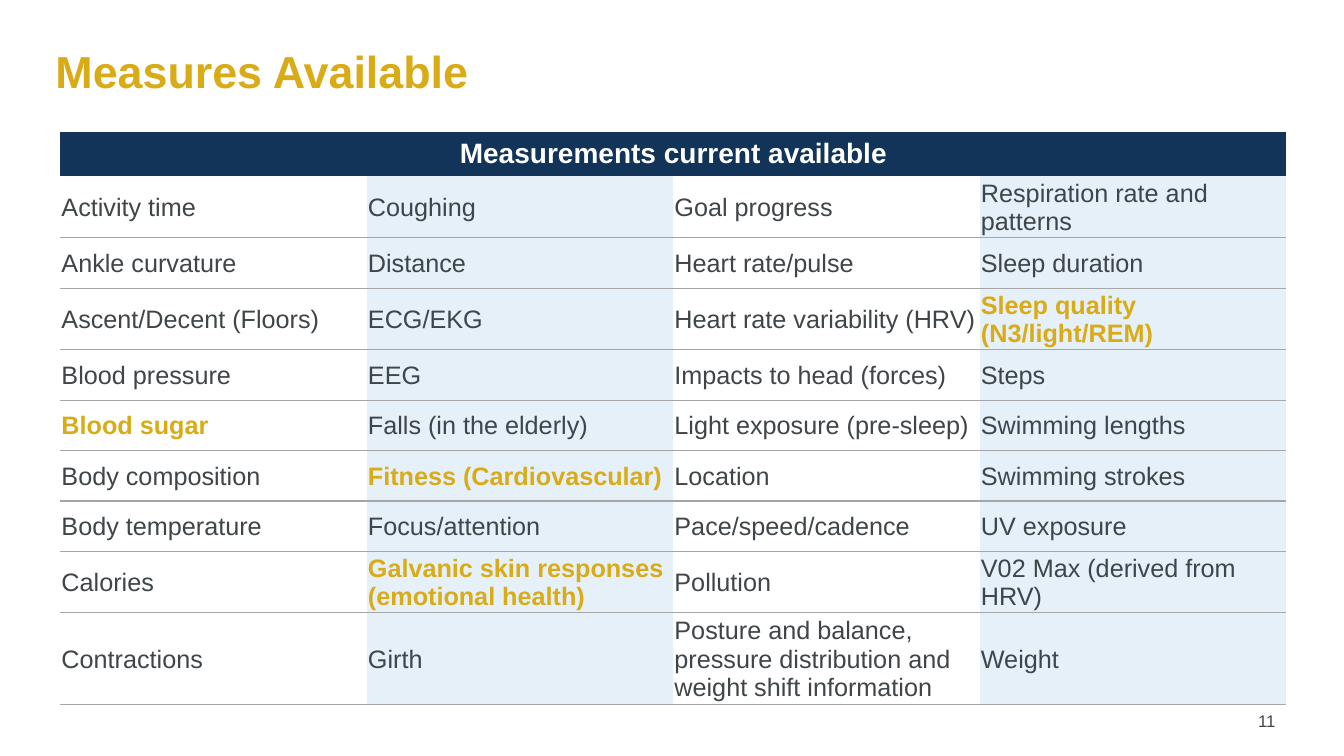
from dataclasses import dataclass

from pptx import Presentation
from pptx.dml.color import RGBColor
from pptx.enum.shapes import MSO_CONNECTOR
from pptx.enum.text import MSO_ANCHOR, MSO_AUTO_SIZE, PP_ALIGN
from pptx.oxml.ns import qn
from pptx.util import Pt
from lxml.etree import SubElement

PX = 9144  # EMU per px, 100 px to the inch


@dataclass(frozen=True)
class Theme:
    font: str = "Arial"
    gold: str = "D9AB16"
    navy: str = "113458"
    ink: str = "3F4548"
    white: str = "FFFFFF"
    pale_blue: str = "E5F0F9"
    rule: str = "A6A6A6"
    title_size: int = 32
    header_size: int = 20
    body_size: int = 18
    number_size: int = 12
    line_width: int = 1


THEME = Theme()

HEADING = "Measurements current available"
MEASURES = [
    ["Activity time", "Coughing", "Goal progress", "Respiration rate and patterns"],
    ["Ankle curvature", "Distance", "Heart rate/pulse", "Sleep duration"],
    ["Ascent/Decent (Floors)", "ECG/EKG", "Heart rate variability (HRV)",
     "Sleep quality (N3/light/REM)"],
    ["Blood pressure", "EEG", "Impacts to head (forces)", "Steps"],
    ["Blood sugar", "Falls (in the elderly)", "Light exposure (pre-sleep)",
     "Swimming lengths"],
    ["Body composition", "Fitness (Cardiovascular)", "Location", "Swimming strokes"],
    ["Body temperature", "Focus/attention", "Pace/speed/cadence", "UV exposure"],
    ["Calories", "Galvanic skin responses (emotional health)", "Pollution",
     "V02 Max (derived from HRV)"],
    ["Contractions", "Girth",
     "Posture and balance, pressure distribution and weight shift information",
     "Weight"],
]
HIGHLIGHTED = {
    "Sleep quality (N3/light/REM)",
    "Blood sugar",
    "Fitness (Cardiovascular)",
    "Galvanic skin responses (emotional health)",
}
ROW_HEIGHTS = [44, 58, 50, 58, 50, 50, 50, 50, 58, 86]


def emu(box):
    return [length * PX for length in box]


def set_all(target, values):
    for attribute, value in values.items():
        setattr(target, attribute, value)


def write(frame, text, size, color, bold=False, align=PP_ALIGN.LEFT):
    """Fill a text frame with one formatted paragraph."""
    frame.word_wrap = True
    paragraph = frame.paragraphs[0]
    paragraph.alignment = align
    run = paragraph.add_run()
    run.text = text
    set_all(run.font, {"name": THEME.font, "size": Pt(size), "bold": bold})
    run.font.color.rgb = RGBColor.from_string(color)


def add_title(slide, box, text):
    title = slide.shapes.title
    set_all(title, dict(zip(("left", "top", "width", "height"), emu(box))))
    set_all(title.text_frame, {"vertical_anchor": MSO_ANCHOR.MIDDLE,
                               "auto_size": MSO_AUTO_SIZE.NONE})
    write(title.text_frame, text, THEME.title_size, THEME.gold, bold=True)


def set_cell_look(cell, fill, ruled_sides):
    """Rule the given sides, clear the others, then fill the cell."""
    properties = cell._tc.get_or_add_tcPr()
    for side in ("lnL", "lnR", "lnT", "lnB"):
        border = SubElement(properties, qn(f"a:{side}"), w=str(Pt(THEME.line_width)))
        if side in ruled_sides:
            solid = SubElement(border, qn("a:solidFill"))
            SubElement(solid, qn("a:srgbClr"), val=THEME.rule)
        else:
            SubElement(border, qn("a:noFill"))
    cell.fill.solid()
    cell.fill.fore_color.rgb = RGBColor.from_string(fill)
    cell.vertical_anchor = MSO_ANCHOR.MIDDLE


def add_measures_table(slide, box):
    columns = len(MEASURES[0])
    table = slide.shapes.add_table(len(ROW_HEIGHTS), columns, *emu(box)).table
    set_all(table, {"first_row": False, "horz_banding": False})
    for row, height in zip(table.rows, ROW_HEIGHTS):
        row.height = height * PX

    header = table.cell(0, 0)
    header.merge(table.cell(0, columns - 1))
    for column in range(columns):
        set_cell_look(table.cell(0, column), THEME.navy, ())
    write(header.text_frame, HEADING, THEME.header_size, THEME.white,
          bold=True, align=PP_ALIGN.CENTER)

    for row, measures in enumerate(MEASURES, start=1):
        for column, measure in enumerate(measures):
            cell = table.cell(row, column)
            set_all(cell, {"margin_left": PX, "margin_right": PX,
                           "margin_top": PX, "margin_bottom": 0})
            set_cell_look(cell, THEME.pale_blue if column % 2 else THEME.white,
                          ("lnB",) if row == 1 else ("lnT", "lnB"))
            key = measure in HIGHLIGHTED
            write(cell.text_frame, measure, THEME.body_size,
                  THEME.gold if key else THEME.ink, bold=key)


def add_footer(slide, box, number):
    """Draw the rule along the top of the box and the page number at its right."""
    left, top, width, height = box
    rule = slide.shapes.add_connector(
        MSO_CONNECTOR.STRAIGHT, *emu((left, top, left + width, top)))
    rule.line.color.rgb = RGBColor.from_string(THEME.gold)
    rule.line.width = Pt(THEME.line_width)
    SubElement(rule._element.spPr, qn("a:effectLst"))

    number_width, gap, overhang = 94, 8, 10
    page = slide.shapes.add_textbox(*emu(
        (left + width + overhang - number_width, top + gap,
         number_width, height - gap)))
    write(page.text_frame, number, THEME.number_size, THEME.ink,
          align=PP_ALIGN.RIGHT)


def main():
    deck = Presentation()
    set_all(deck, {"slide_width": 1333 * PX, "slide_height": 750 * PX})
    slide = deck.slides.add_slide(deck.slide_layouts.get_by_name("Title Only"))
    add_footer(slide, (68, 692, 1197, 45), "11")
    add_measures_table(slide, (60, 131, 1216, sum(ROW_HEIGHTS)))
    add_title(slide, (45, 9, 1209, 122), "Measures Available")
    deck.save("out.pptx")


if __name__ == "__main__":
    main()
